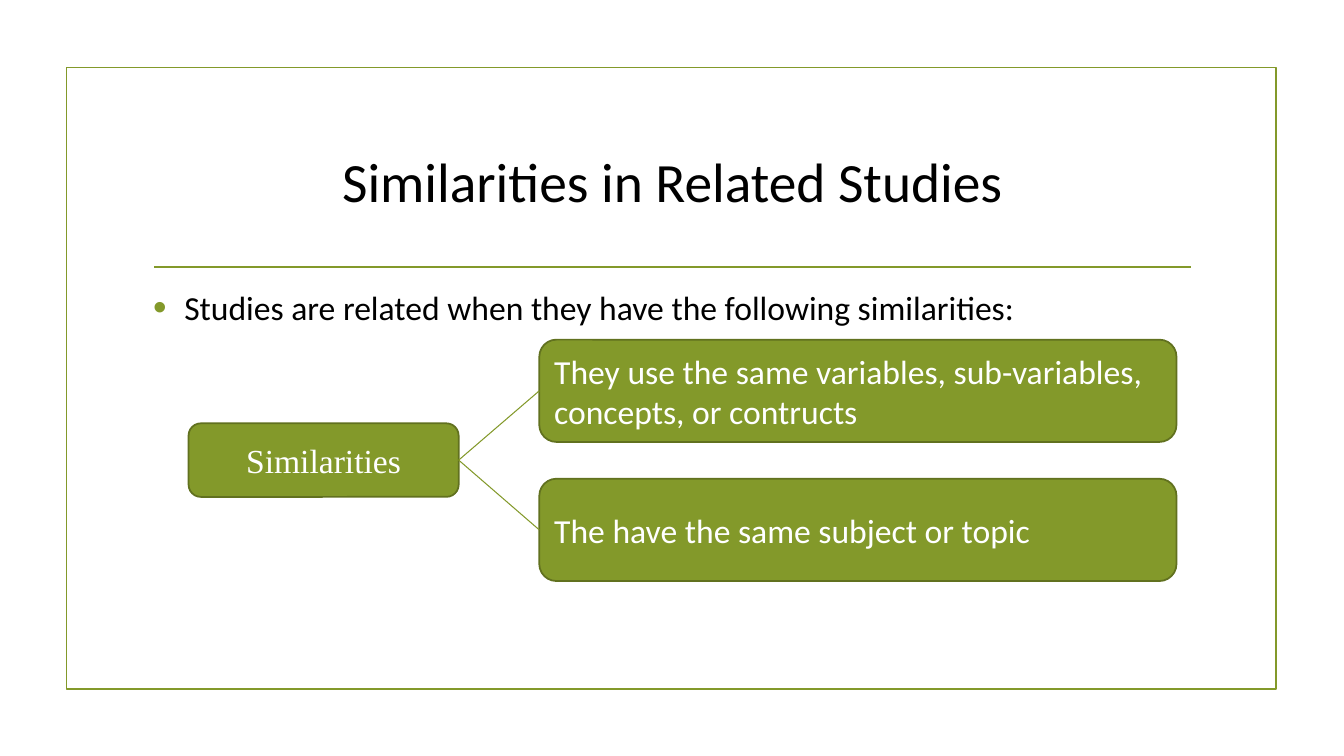
import pptx
import pptx.util
import pptx.dml.color
import pptx.enum.shapes
import pptx.enum.text
import pptx.oxml

OLIVE = pptx.dml.color.RGBColor(0x83, 0x99, 0x2A)
DARK_OLIVE = pptx.dml.color.RGBColor(0x61, 0x71, 0x1F)
WHITE = pptx.dml.color.RGBColor(0xFF, 0xFF, 0xFF)
BLACK = pptx.dml.color.RGBColor(0, 0, 0)
NS = 'xmlns:a="http://schemas.openxmlformats.org/drawingml/2006/main"'
SHAPE = pptx.enum.shapes.MSO_SHAPE
ALIGN = pptx.enum.text.PP_ALIGN
ANCHOR = pptx.enum.text.MSO_ANCHOR

prs = pptx.Presentation()
prs.slide_width = pptx.util.Inches(13.33)
prs.slide_height = pptx.util.Inches(7.5)
s = prs.slides.add_slide(prs.slide_layouts[6])

# Lengths are percentages of the slide's width and height
COL = prs.slide_width / 100
ROW = prs.slide_height / 100


def area(x, y, w, h):
    return [round(v) for v in (x * COL, y * ROW, w * COL, h * ROW)]


def write(sp, text, align, anchor, size, font, color):
    tf = sp.text_frame
    tf.word_wrap = True
    tf.vertical_anchor = anchor
    p = tf.paragraphs[0]
    p.alignment = align
    r = p.add_run()
    r.text = text
    for name, value in {"size": pptx.util.Pt(size), "name": font}.items():
        setattr(r.font, name, value)
    r.font.color.rgb = color
    return p


# Frame
frame = s.shapes.add_shape(SHAPE.RECTANGLE, *area(4.95, 8.93, 90.02, 82.27))
frame.shadow.inherit = False
frame.fill.background()
frame.line.color.rgb = OLIVE
frame.line.width = pptx.util.Pt(1.25)

# Title and body
title = s.shapes.add_textbox(*area(10.65, 14.27, 78.77, 19.07))
write(title, "Similarities in Related Studies", ALIGN.CENTER, ANCHOR.MIDDLE,
      39.6, "Calibri", BLACK)
body = s.shapes.add_textbox(*area(10.65, 37.33, 78.77, 48.4))
p = write(body, "Studies are related when they have the following similarities:",
          ALIGN.LEFT, ANCHOR.TOP, 24, "Calibri", BLACK)
pPr = p._p.get_or_add_pPr()
indent = pptx.util.Inches(0.31)
pPr.set("marL", str(indent))
pPr.set("indent", str(-indent))
for xml in (f'<a:buClr {NS}><a:srgbClr val="{OLIVE}"/></a:buClr>',
            f'<a:buSzPct {NS} val="115000"/>',
            f'<a:buFont {NS} typeface="Arial"/>',
            f'<a:buChar {NS} char="•"/>'):
    pPr.append(pptx.oxml.parse_xml(xml))

# Boxes: the root on the left, one branch per similarity on the right
ROOT_X, ROOT_Y, ROOT_W, ROOT_H = 14.03, 56, 20.1, 9.73
BRANCH_X, BRANCH_Y, BRANCH_W, BRANCH_H, BRANCH_STEP = 40.13, 44.93, 47.41, 13.53, 18.4
branches = ["They use the same variables, sub-variables, concepts, or contructs",
            "The have the same subject or topic"]
boxes = [("Similarities", ROOT_X, ROOT_Y, ROOT_W, ROOT_H, ALIGN.CENTER, "Times New Roman")]
# The title rule, then a link from the root to each branch
lines = [(11.48, 35.33, 88.6, 35.33, 1.25)]
for i, text in enumerate(branches):
    y = BRANCH_Y + i * BRANCH_STEP
    boxes.append((text, BRANCH_X, y, BRANCH_W, BRANCH_H, ALIGN.LEFT, "Calibri"))
    lines.append((ROOT_X + ROOT_W, ROOT_Y + ROOT_H / 2, BRANCH_X, y + BRANCH_H / 2, 0.75))

for text, x, y, w, h, align, font in boxes:
    sp = s.shapes.add_shape(SHAPE.ROUNDED_RECTANGLE, *area(x, y, w, h))
    sp.shadow.inherit = False
    sp.fill.solid()
    sp.fill.fore_color.rgb = OLIVE
    sp.line.color.rgb = DARK_OLIVE
    sp.line.width = pptx.util.Pt(1.25)
    write(sp, text, align, ANCHOR.MIDDLE, 24, font, WHITE)

# Lines
for x1, y1, x2, y2, width in lines:
    line = s.shapes.add_connector(pptx.enum.shapes.MSO_CONNECTOR.STRAIGHT,
                                  *area(x1, y1, x2, y2))
    line.line.color.rgb = OLIVE
    line.line.width = pptx.util.Pt(width)
    line._element.spPr.append(pptx.oxml.parse_xml(f"<a:effectLst {NS}/>"))

prs.save("out.pptx")
